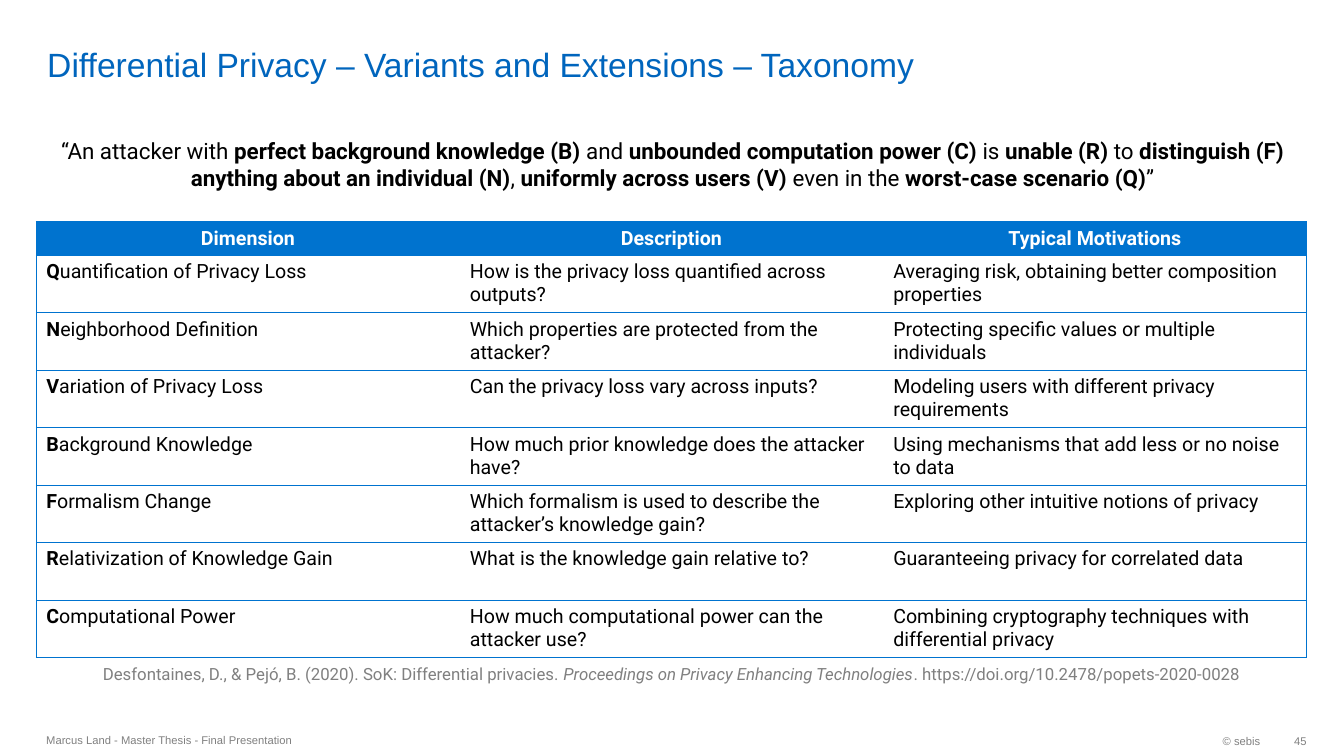
from lxml.etree import SubElement
from pptx import Presentation
from pptx.dml.color import RGBColor
from pptx.enum.text import MSO_ANCHOR, PP_ALIGN
from pptx.oxml.ns import qn
from pptx.util import Inches, Pt

TITLE_BLUE, TABLE_BLUE = "0065BD", "0073CF"
BLACK, WHITE, GRAY = "000000", "FFFFFF", "808080"


def color(value):
    return RGBColor.from_string(value)


class SlideBuilder:
    heading_font = "Arial"
    body_font = "Roboto"

    def __init__(self, slide):
        self.slide = slide

    def runs(self, paragraph, parts, size, font, fill):
        """Each part is its text and a style: "", "b" (bold) or "i" (italic)."""
        for text, style in parts:
            run = paragraph.add_run()
            run.text = text
            run.font.name = font
            run.font.size = Pt(size)
            run.font.bold = style == "b"
            run.font.italic = style == "i"
            run.font.color.rgb = color(fill)

    def text(self, box, parts, size, font, fill, align=PP_ALIGN.LEFT,
             anchor=MSO_ANCHOR.TOP, insets=(0.1, 0.05, 0.1, 0.05),
             wrap=True, hanging=0):
        shape = self.slide.shapes.add_textbox(*map(Inches, box))
        frame = shape.text_frame
        frame.word_wrap = wrap
        frame.vertical_anchor = anchor
        (frame.margin_left, frame.margin_top,
         frame.margin_right, frame.margin_bottom) = map(Inches, insets)
        paragraph = frame.paragraphs[0]
        paragraph.alignment = align
        if hanging:
            properties = paragraph._p.get_or_add_pPr()
            properties.set("marL", str(Inches(hanging)))
            properties.set("indent", str(-Inches(hanging)))
        self.runs(paragraph, parts, size, font, fill)

    def footer(self, box, text, **options):
        self.text(box, [(text, "")], 8, self.heading_font, GRAY,
                  anchor=MSO_ANCHOR.MIDDLE, **options)

    def borders(self, cell, visible_sides):
        properties = cell._tc.get_or_add_tcPr()
        for side in "LRTB":
            line = SubElement(properties, qn(f"a:ln{side}"), w=str(Pt(0.75)))
            if side in visible_sides:
                fill = SubElement(line, qn("a:solidFill"))
                SubElement(fill, qn("a:srgbClr"), val=TABLE_BLUE)
            else:
                SubElement(line, qn("a:noFill"))

    def table(self, box, header, rows, header_height, row_height):
        last = len(header) - 1
        table = self.slide.shapes.add_table(
            len(rows) + 1, len(header), *map(Inches, box)).table
        table.horz_banding = False
        for column in table.columns:
            column.width = Inches(box[2] / len(header))
        for row_index, values in enumerate([header, *rows]):
            is_header = row_index == 0
            table.rows[row_index].height = Inches(
                header_height if is_header else row_height)
            for column_index, value in enumerate(values):
                cell = table.cell(row_index, column_index)
                self.borders(cell, "TB" + "L" * (column_index == 0)
                             + "R" * (column_index == last))
                paragraph = cell.text_frame.paragraphs[0]
                parts = [(value, "")]
                if is_header:
                    cell.fill.solid()
                    cell.fill.fore_color.rgb = color(TABLE_BLUE)
                    paragraph.alignment = PP_ALIGN.CENTER
                    parts = [(value, "b")]
                else:
                    cell.fill.background()
                    if column_index == 0:
                        parts = [(value[0], "b"), (value[1:], "")]
                self.runs(paragraph, parts, 14, self.body_font,
                          WHITE if is_header else BLACK)


HEADER = ["Dimension", "Description", "Typical Motivations"]
DIMENSIONS = [
    ("Quantification of Privacy Loss",
     "How is the privacy loss quantified across outputs?",
     "Averaging risk, obtaining better composition properties"),
    ("Neighborhood Definition",
     "Which properties are protected from the attacker?",
     "Protecting specific values or multiple individuals"),
    ("Variation of Privacy Loss",
     "Can the privacy loss vary across inputs?",
     "Modeling users with different privacy requirements"),
    ("Background Knowledge",
     "How much prior knowledge does the attacker have?",
     "Using mechanisms that add less or no noise to data"),
    ("Formalism Change",
     "Which formalism is used to describe the attacker’s knowledge gain?",
     "Exploring other intuitive notions of privacy"),
    ("Relativization of Knowledge Gain",
     "What is the knowledge gain relative to?",
     "Guaranteeing privacy for correlated data"),
    ("Computational Power",
     "How much computational power can the attacker use?",
     "Combining cryptography techniques with differential privacy"),
]
QUOTE = [
    ("“An attacker with ", ""),
    ("perfect background knowledge (B)", "b"),
    (" and ", ""),
    ("unbounded computation power (C) ", "b"),
    ("is ", ""),
    ("unable (R)", "b"),
    (" to ", ""),
    ("distinguish (F) anything about an individual (N)", "b"),
    (", ", ""),
    ("uniformly across users (V)", "b"),
    (" even in the ", ""),
    ("worst-case scenario (Q)", "b"),
    ("”", ""),
]
REFERENCE = [
    ("Desfontaines, D., & Pejó, B. (2020). SoK: Differential privacies. ", ""),
    ("Proceedings on Privacy Enhancing Technologies", "i"),
    (". https://doi.org/10.2478/popets-2020-0028", ""),
]


def main():
    presentation = Presentation()
    presentation.slide_width = Inches(13.33)
    presentation.slide_height = Inches(7.5)
    builder = SlideBuilder(
        presentation.slides.add_slide(presentation.slide_layouts[6]))

    # Title
    builder.text((0.37, 0.05, 11.58, 0.79),
                 [("Differential Privacy – Variants and Extensions – Taxonomy", "")],
                 24, builder.heading_font, TITLE_BLUE,
                 anchor=MSO_ANCHOR.BOTTOM, insets=(0.1, 0, 0.1, 0))

    # Footer
    builder.footer((10.26, 7.19, 2.34, 0.32), "© sebis",
                   align=PP_ALIGN.RIGHT, wrap=False)
    builder.footer((0.36, 7.18, 6.3, 0.32),
                   "Marcus Land - Master Thesis - Final Presentation")
    builder.footer((12.6, 7.19, 0.36, 0.32), "45", align=PP_ALIGN.RIGHT,
                   wrap=False, insets=(0.1, 0.05, 0, 0.05))

    # Taxonomy table
    builder.table((0.36, 2.2, 12.6, 4.3), HEADER, DIMENSIONS,
                  header_height=0.32, row_height=0.57)

    # Quote above the table and reference below it
    builder.text((0.37, 1.31, 12.6, 0.64), QUOTE, 16, builder.body_font,
                 BLACK, align=PP_ALIGN.CENTER)
    builder.text((0.36, 6.54, 12.6, 0.3), REFERENCE, 12, builder.body_font,
                 GRAY, align=PP_ALIGN.CENTER, hanging=0.33)

    presentation.save("out.pptx")


if __name__ == "__main__":
    main()
